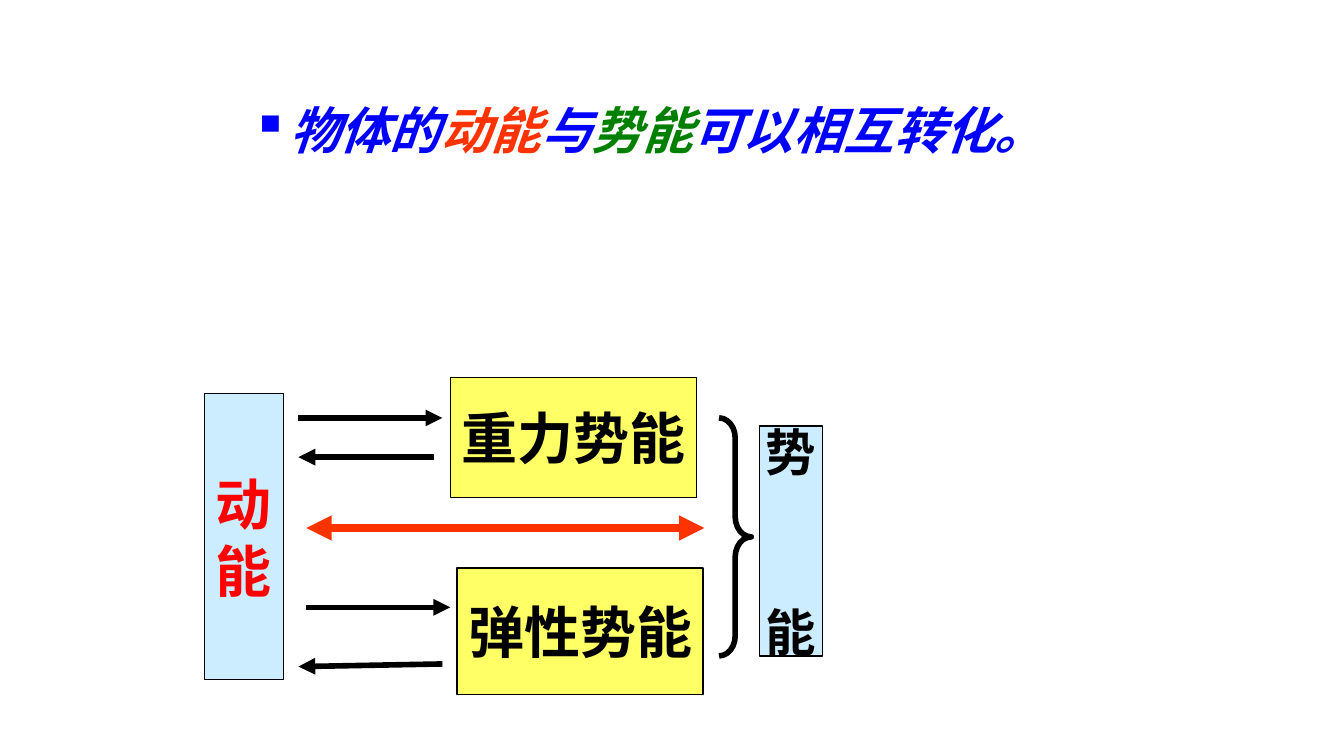
from typing import NamedTuple

from lxml import etree
from pptx import Presentation
from pptx import util as u
from pptx.dml.color import RGBColor
from pptx.enum import shapes, text
from pptx.oxml.ns import qn

HUES = {"blue": "0000FF", "orange": "FF3300", "green": "008000", "red": "FF0000",
        "black": "000000", "sky": "CCECFF", "lemon": "FFFF66"}
SANS, CJK = "DejaVu Sans", "Noto Sans CJK SC"


class Box(NamedTuple):
    left: float
    top: float
    width: float
    height: float
    fill: str
    lines: list[str]
    ink: str = "black"
    size: int = 30
    gap: float = 0


class Arrow(NamedTuple):
    x1: float
    y1: float
    x2: float
    y2: float
    hue: str = "black"
    width: float = 3
    ends: tuple[str, ...] = ("tailEnd",)


# Lengths in centimetres
BOXES = [
    Box(3.86, 7.44, 1.5, 5.41, "sky", ["动", "能"], ink="red"),
    Box(8.51, 7.14, 4.65, 2.26, "lemon", ["重力势能"]),
    Box(8.64, 10.74, 4.65, 2.39, "lemon", ["弹性势能"]),
    Box(14.35, 8.05, 1.2, 4.35, "sky", ["势", "能"], size=27, gap=64),
]
ARROWS = [
    Arrow(5.64, 7.9, 8.36, 7.9),
    Arrow(8.2, 8.64, 5.64, 8.64),
    Arrow(5.79, 11.48, 8.51, 11.48),
    Arrow(8.36, 12.55, 5.64, 12.6),
    Arrow(5.79, 9.98, 13.31, 9.98, "orange", 4.5, ("headEnd", "tailEnd")),
]
TITLE = [("物体的", "blue"), ("动能", "orange"), ("与", "blue"),
         ("势能", "green"), ("可以相互转化。", "blue")]


def rgb(hue: str) -> RGBColor:
    return RGBColor.from_string(HUES[hue])


def add_run(para, words: str, hue: str, size: float, face: str, slant: bool = False) -> None:
    run = para.add_run()
    run.text = words
    font = run.font
    font.name, font.size = face, u.Pt(size)
    font.bold, font.italic = True, slant
    font.color.rgb = rgb(hue)
    etree.SubElement(run._r.get_or_add_rPr(), qn("a:ea"), typeface=face)


def set_line(line, hue: str, width: float) -> None:
    line.color.rgb = rgb(hue)
    line.width = u.Pt(width)


def add_title(slide) -> None:
    title = slide.shapes.title
    title.left, title.top = u.Cm(4.5), u.Cm(1.75)
    title.width, title.height = u.Cm(15), u.Cm(1.4)
    frame = title.text_frame
    frame.word_wrap = True
    frame.auto_size = text.MSO_AUTO_SIZE.NONE
    frame.vertical_anchor = text.MSO_ANCHOR.MIDDLE
    frame.margin_right = 0
    para = frame.paragraphs[0]
    para.alignment = text.PP_ALIGN.LEFT
    etree.SubElement(para._p.get_or_add_pPr(), qn("a:buChar"), char="▪")
    for words, hue in TITLE:
        add_run(para, words, hue, 27, CJK, slant=True)


def add_box(slide, box: Box) -> None:
    shape = slide.shapes.add_shape(shapes.MSO_SHAPE.RECTANGLE, *map(u.Cm, box[:4]))
    shape.shadow.inherit = False
    shape.fill.solid()
    shape.fill.fore_color.rgb = rgb(box.fill)
    set_line(shape.line, "black", 0.75)
    frame = shape.text_frame
    frame.word_wrap = False
    frame.vertical_anchor = text.MSO_ANCHOR.MIDDLE
    frame.margin_left = frame.margin_right = 0
    frame.margin_top = frame.margin_bottom = 0
    for i, words in enumerate(box.lines):
        para = frame.add_paragraph() if i else frame.paragraphs[0]
        para.alignment = text.PP_ALIGN.CENTER
        if i and box.gap:
            para.space_before = u.Pt(box.gap)
        add_run(para, words, box.ink, box.size, SANS)


def add_arrow(slide, arrow: Arrow) -> None:
    link = slide.shapes.add_connector(shapes.MSO_CONNECTOR.STRAIGHT, *map(u.Cm, arrow[:4]))
    set_line(link.line, arrow.hue, arrow.width)
    for end in arrow.ends:
        etree.SubElement(link.line._get_or_add_ln(), qn(f"a:{end}"), type="triangle")
    etree.SubElement(link._element.spPr, qn("a:effectLst"))


def add_brace(slide) -> None:
    brace = slide.shapes.add_shape(shapes.MSO_SHAPE.RIGHT_BRACE,
                                   *map(u.Cm, (13.59, 7.9, 0.61, 4.5)))
    brace.shadow.inherit = False
    brace.adjustments[0], brace.adjustments[1] = 0.62, 0.5
    brace.fill.background()
    set_line(brace.line, "black", 3)


def main() -> None:
    deck = Presentation()
    deck.slide_width, deck.slide_height = u.Cm(25.4), u.Cm(14.29)
    slide = deck.slides.add_slide(deck.slide_layouts[5])
    add_title(slide)
    # Energy forms
    for box in BOXES:
        add_box(slide, box)
    # Conversions between them
    for arrow in ARROWS:
        add_arrow(slide, arrow)
    add_brace(slide)
    deck.save("out.pptx")


if __name__ == "__main__":
    main()
